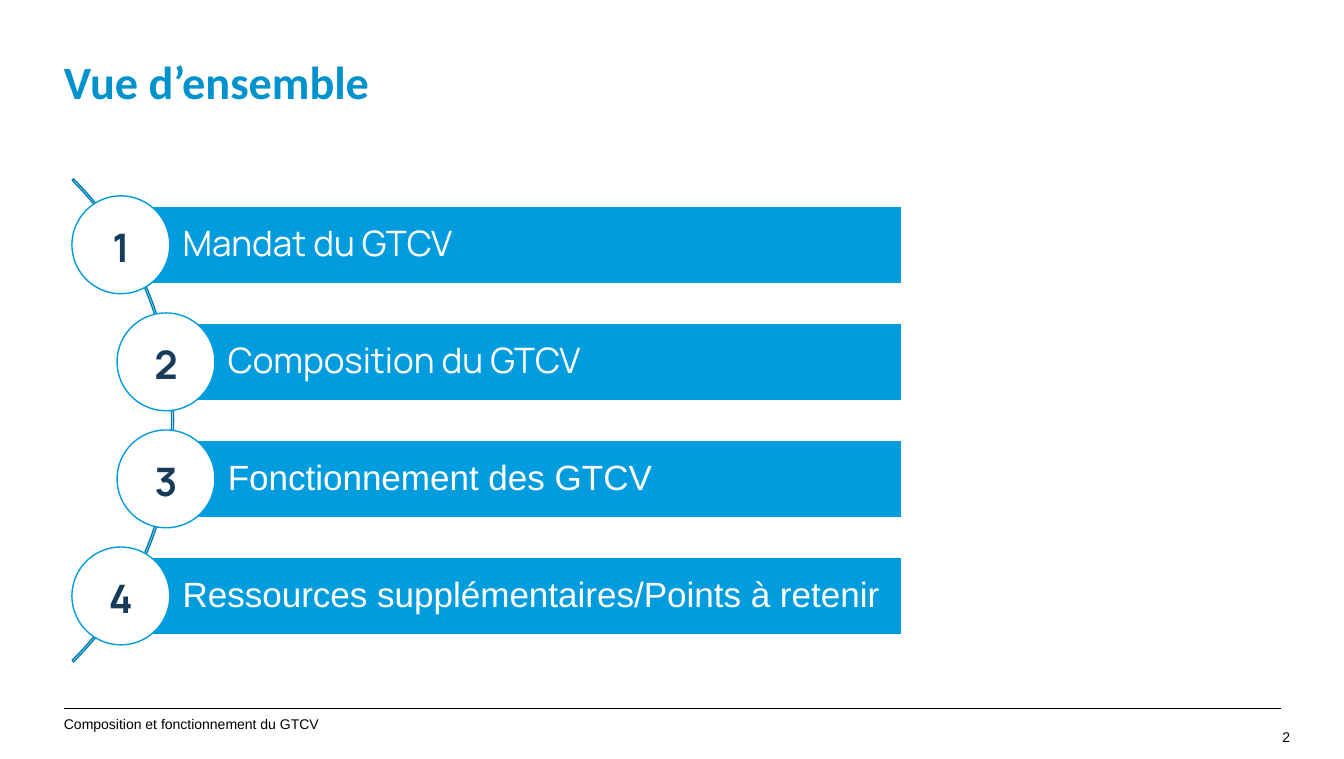
"""Build the overview slide: four numbered topics along an arc."""
from dataclasses import dataclass

from lxml import etree
from pptx import Presentation
from pptx import util as u
from pptx.dml.color import RGBColor
from pptx.enum import shapes, text
from pptx.oxml.ns import qn


@dataclass(frozen=True)
class Theme:
    title: str = "0092CC"
    bar: str = "009CDE"
    arc: str = "007DB2"
    navy: str = "173C5B"
    white: str = "FFFFFF"
    black: str = "000000"
    head: float = 33
    digit: float = 28
    label: float = 25
    small: float = 10


look = Theme()
Pt = u.Pt
Align = text.PP_ALIGN
Anchor = text.MSO_ANCHOR


def write(shape, words, font, size, color, bold=False, align=Align.LEFT,
          anchor=Anchor.TOP, pads=(0, 0, 0, 0), space=1.0):
    frame = shape.text_frame
    frame.text = words
    frame.word_wrap = True
    frame.auto_size = text.MSO_AUTO_SIZE.NONE
    frame.vertical_anchor = anchor
    frame.margin_left, frame.margin_top, frame.margin_right, frame.margin_bottom = map(Pt, pads)
    line = frame.paragraphs[0]
    line.alignment = align
    line.line_spacing = space
    face = line.runs[0].font
    face.name, face.size, face.bold = font, Pt(size), bold
    face.color.rgb = RGBColor.from_string(color)


def draw(kind, left, top, width, height, fill, edge):
    shape = slide.shapes.add_shape(kind, Pt(left), Pt(top), Pt(width), Pt(height))
    shape.shadow.inherit = False
    shape.fill.background()
    if fill:
        shape.fill.solid()
        shape.fill.fore_color.rgb = RGBColor.from_string(fill)
    shape.line.color.rgb = RGBColor.from_string(edge)
    shape.line.width = Pt(1)
    return shape


deck = Presentation()
deck.slide_width, deck.slide_height = Pt(958.32), Pt(541.44)
slide = deck.slides.add_slide(deck.slide_layouts[5])

title = slide.shapes.title
title.left, title.top, title.width, title.height = Pt(45.6), Pt(42.5), Pt(400), Pt(32)
write(title, "Vue d’ensemble", "Calibri", look.head, look.title, bold=True, space=0.9)

rule = slide.shapes.add_connector(
    shapes.MSO_CONNECTOR.STRAIGHT, Pt(45.6), Pt(505.2), Pt(913.4), Pt(505.2))
rule.line.color.rgb = RGBColor.from_string(look.black)
rule.line.width = Pt(0.75)
etree.SubElement(rule.element.spPr, qn("a:effectLst"))

footer = slide.shapes.add_textbox(Pt(45.6), Pt(510.5), Pt(595), Pt(14))
write(footer, "Composition et fonctionnement du GTCV", "Arial", look.small, look.black)
page = slide.shapes.add_textbox(Pt(897), Pt(519.8), Pt(23), Pt(14.4))
write(page, "2", "Arial", look.small, look.black, align=Align.RIGHT)

mid, size = 299.9, 487.4
arc = draw(shapes.MSO_SHAPE.BLOCK_ARC, -363.6, mid - size / 2, size, size, None, look.arc)
for index, value in enumerate((189, 27, 0.003)):
    arc.adjustments[index] = value

topics = [
    ("Mandat du GTCV", "Manrope", 86.2),
    ("Composition du GTCV", "Manrope", 118.4),
    ("Fonctionnement des GTCV", "Arial", 118.4),
    ("Ressources supplémentaires/Points à retenir", "Arial", 86.2),
]
right, high, disc, pitch = 643, 55.6, 69.8, 83.5
for row, (topic, font, left) in enumerate(topics):
    center = mid + (row - 1.5) * pitch
    bar = draw(shapes.MSO_SHAPE.RECTANGLE, left, center - high / 2,
               right - left, high, look.bar, look.white)
    write(bar, topic, font, look.label, look.white, anchor=Anchor.MIDDLE,
          pads=(44, 5, 5, 5), space=0.9)
    badge = draw(shapes.MSO_SHAPE.OVAL, left - disc / 2, center - disc / 2,
                 disc, disc, look.white, look.bar)
    write(badge, str(row + 1), "Manrope", look.digit, look.navy, bold=True,
          align=Align.CENTER, anchor=Anchor.MIDDLE, pads=(0, 3, 0, 0))

deck.save("out.pptx")
